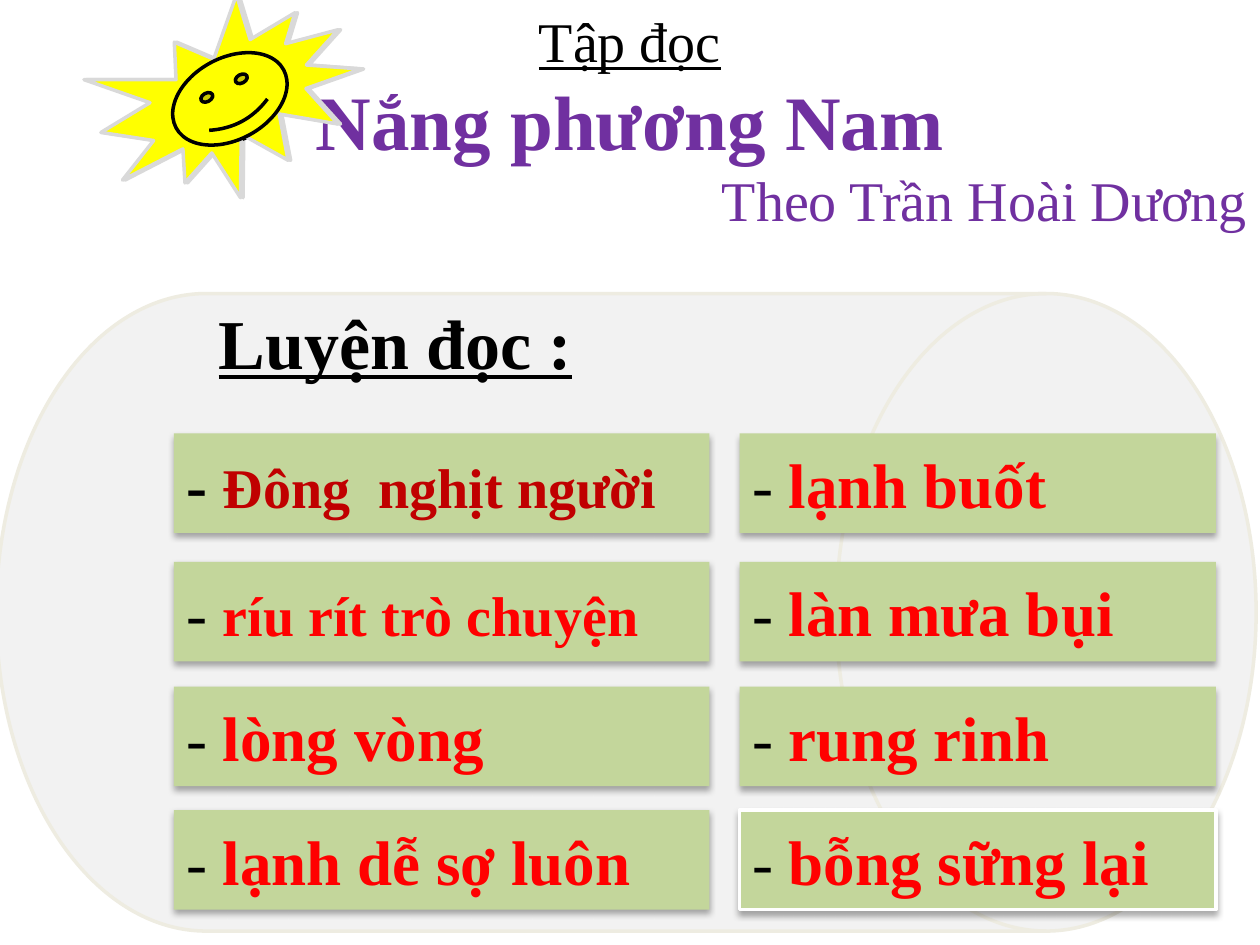
from lxml.etree import SubElement
from pptx import Presentation
from pptx.enum.shapes import MSO_SHAPE
from pptx.enum.text import MSO_ANCHOR, PP_ALIGN
from pptx.dml.color import RGBColor
from pptx.oxml.ns import qn
from pptx.util import Inches, Pt

COLORS = {
    "black": "000000", "white": "FFFFFF", "purple": "7030A0", "red": "FF0000",
    "dark_red": "C00000", "yellow": "FFFF00", "silver": "D9D9D9",
    "drum": "F2F2F2", "cream": "EEECE1", "green": "C3D69B",
}
FONT = "Times New Roman"
ROW_TOPS = (3.44, 4.46, 5.45, 6.43)
COLUMNS = (
    (1.38, 4.25, (
        ("Đông  nghịt người", {"size": 32, "color": "dark_red"}),
        ("ríu rít trò chuyện", {"size": 32}),
        ("lòng vòng", {}),
        ("lạnh dễ sợ luôn", {}),
    )),
    (5.87, 3.78, (
        ("lạnh buốt", {}),
        ("làn mưa bụi", {}),
        ("rung rinh", {}),
        ("bỗng sững lại", {}),
    )),
)


def rgb(name):
    return RGBColor.from_string(COLORS[name])


def write(paragraph, text, size=36, color="black", bold=False, underline=False,
          align=PP_ALIGN.LEFT):
    paragraph.alignment = align
    run = paragraph.add_run()
    run.text = text
    run.font.name = FONT
    run.font.size = Pt(size)
    run.font.bold = bold
    run.font.underline = underline
    run.font.color.rgb = rgb(color)


class LessonSlide:
    """Holds the current slide and draws its elements in one style."""

    def __init__(self, presentation):
        self.slide = presentation.slides.add_slide(presentation.slide_layouts[6])

    def shape(self, kind, box, fill, line=None, rotation=0):
        shape = self.slide.shapes.add_shape(kind, *map(Inches, box))
        shape.shadow.inherit = False
        shape.rotation = rotation
        shape.fill.solid()
        shape.fill.fore_color.rgb = rgb(fill)
        if line:
            shape.line.color.rgb = rgb(line)
            shape.line.width = Pt(2)
        else:
            shape.line.fill.background()
        return shape

    def heading(self):
        frame = self.slide.shapes.add_textbox(0, 0, Inches(10), Inches(1.92)).text_frame
        frame.word_wrap = True
        write(frame.paragraphs[0], "Tập đọc", size=32, underline=True,
              align=PP_ALIGN.CENTER)
        write(frame.add_paragraph(), "Nắng phương Nam", size=44, color="purple",
              bold=True, align=PP_ALIGN.CENTER)
        write(frame.add_paragraph(), "Theo Trần Hoài Dương", size=32, color="purple",
              align=PP_ALIGN.RIGHT)

    def sun(self, left):
        self.shape(MSO_SHAPE.EXPLOSION1, (left, 0.04, 2.1, 1.5), "yellow", "silver", 337.5)
        self.shape(MSO_SHAPE.SMILEY_FACE, (left + 0.56, 0.46, 0.97, 0.65),
                   "yellow", "black", 331.7)

    def drum(self, title):
        shape = self.shape(MSO_SHAPE.FLOWCHART_DIRECT_ACCESS_STORAGE,
                           (-0.03, 2.33, 10, 5.06), "drum", "cream")
        shape.text_frame.vertical_anchor = MSO_ANCHOR.TOP
        write(shape.text_frame.paragraphs[0], title, size=40, bold=True, underline=True)

    def shadow(self, shape):
        effects = shape.element.spPr.find(qn("a:effectLst"))
        outer = SubElement(effects, qn("a:outerShdw"), blurRad=str(Pt(3.5)),
                           dist=str(Pt(2.2)), dir="5400000", rotWithShape="0")
        color = SubElement(outer, qn("a:srgbClr"), val=COLORS["black"])
        SubElement(color, qn("a:alpha"), val="32000")

    def card(self, box, text, style, line=None, bold_dash=False):
        shape = self.shape(MSO_SHAPE.RECTANGLE, box, "green", line)
        self.shadow(shape)
        shape.text_frame.vertical_anchor = MSO_ANCHOR.MIDDLE
        paragraph = shape.text_frame.paragraphs[0]
        write(paragraph, "- ", bold=bold_dash)
        write(paragraph, text, **{"color": "red", "bold": True, **style})


def main():
    presentation = Presentation()
    presentation.slide_width = Inches(10)
    presentation.slide_height = Inches(7.5)
    lesson = LessonSlide(presentation)
    lesson.heading()
    lesson.sun(0.8)
    lesson.drum("Luyện đọc :")
    for left, width, phrases in COLUMNS:
        for top, (text, style) in zip(ROW_TOPS, phrases):
            lesson.card((left, top, width, 0.79), text, style,
                        line="white" if text == "bỗng sững lại" else None,
                        bold_dash="color" in style)
    lesson.sun(0.78)
    presentation.save("out.pptx")


if __name__ == "__main__":
    main()
